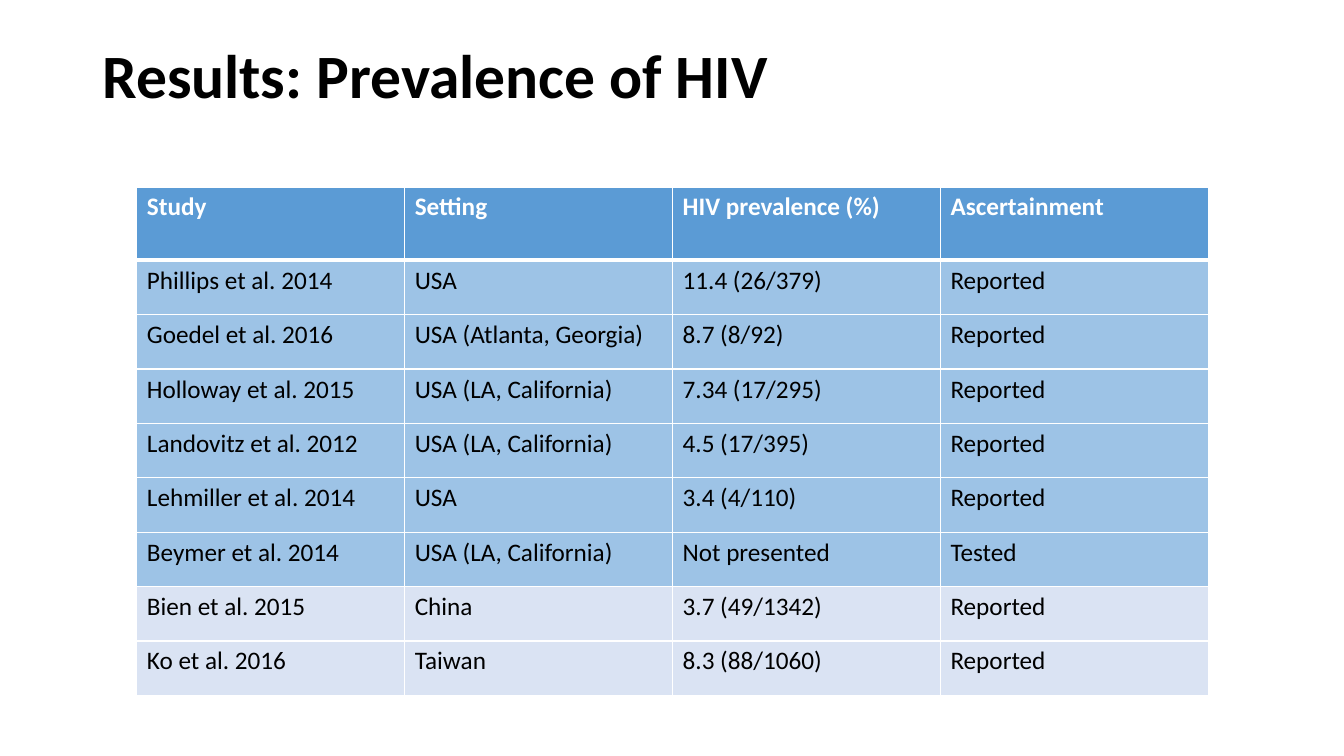
import pptx
import pptx.dml.color
import pptx.enum.text
import pptx.oxml
import pptx.oxml.ns
import pptx.util

Cm = pptx.util.Cm
Pt = pptx.util.Pt

HEADER = ("Study", "Setting", "HIV prevalence (%)", "Ascertainment")
USA_STUDIES = [
    ("Phillips et al. 2014", "USA", "11.4 (26/379)", "Reported"),
    ("Goedel et al. 2016", "USA (Atlanta, Georgia)", "8.7 (8/92)", "Reported"),
    ("Holloway et al. 2015", "USA (LA, California)", "7.34 (17/295)", "Reported"),
    ("Landovitz et al. 2012", "USA (LA, California)", "4.5 (17/395)", "Reported"),
    ("Lehmiller et al. 2014", "USA", "3.4 (4/110)", "Reported"),
    ("Beymer et al. 2014", "USA (LA, California)", "Not presented", "Tested"),
]
ASIA_STUDIES = [
    ("Bien et al. 2015", "China", "3.7 (49/1342)", "Reported"),
    ("Ko et al. 2016", "Taiwan", "8.3 (88/1060)", "Reported"),
]
HEADER_HEIGHT = Cm(1.85)
STUDY_HEIGHT = Cm(1.37)
COLUMN_WIDTH = Cm(6.75)


def rgb(value):
    return pptx.dml.color.RGBColor.from_string(value)


def write(tf, text, color, **font):
    p = tf.paragraphs[0]
    r = p.add_run()
    r.text = text
    for name, value in dict(name="Calibri", **font).items():
        setattr(r.font, name, value)
    r.font.color.rgb = rgb(color)
    return p


def add_title(s, text):
    sp = s.shapes.add_textbox(Cm(2.33), Cm(1.01), Cm(29.21), Cm(3.68))
    tf = sp.text_frame
    tf.word_wrap = True
    tf.vertical_anchor = pptx.enum.text.MSO_ANCHOR.TOP
    p = write(tf, text, "000000", size=Pt(44), bold=True)
    p.line_spacing = 0.9


def add_borders(cell, color, widths):
    for side, width in widths.items():
        cell._tc.get_or_add_tcPr().append(pptx.oxml.parse_xml(
            f'<a:ln{side} {pptx.oxml.ns.nsdecls("a")} w="{Pt(width)}">'
            f'<a:solidFill><a:srgbClr val="{color}"/></a:solidFill></a:ln{side}>'
        ))


def fill_row(table, index, texts, height, fill, color, bold, top=1, bottom=1):
    table.rows[index].height = height
    for cell, text in zip(table.rows[index].cells, texts):
        write(cell.text_frame, text, color, size=Pt(18), bold=bold)
        add_borders(cell, "FFFFFF", {"L": 1, "R": 1, "T": top, "B": bottom})
        cell.fill.solid()
        cell.fill.fore_color.rgb = rgb(fill)


def add_prevalence_table(s):
    studies = [(row, "9DC3E6") for row in USA_STUDIES]
    studies += [(row, "DAE3F3") for row in ASIA_STUDIES]
    table = s.shapes.add_table(
        len(studies) + 1, len(HEADER), Cm(3.45), Cm(4.71),
        COLUMN_WIDTH * len(HEADER), HEADER_HEIGHT + STUDY_HEIGHT * len(studies),
    ).table
    for column in table.columns:
        column.width = COLUMN_WIDTH
    fill_row(table, 0, HEADER, HEADER_HEIGHT, "5B9BD5", "FFFFFF", True, bottom=3)
    for index, (texts, fill) in enumerate(studies, 1):
        fill_row(table, index, texts, STUDY_HEIGHT, fill, "000000", False,
                 top=3 if index == 1 else 1)


def main():
    prs = pptx.Presentation()
    prs.slide_width, prs.slide_height = Cm(33.87), Cm(19.05)
    s = prs.slides.add_slide(prs.slide_layouts[6])
    add_title(s, "Results: Prevalence of HIV")
    add_prevalence_table(s)
    prs.save("out.pptx")


if __name__ == "__main__":
    main()
